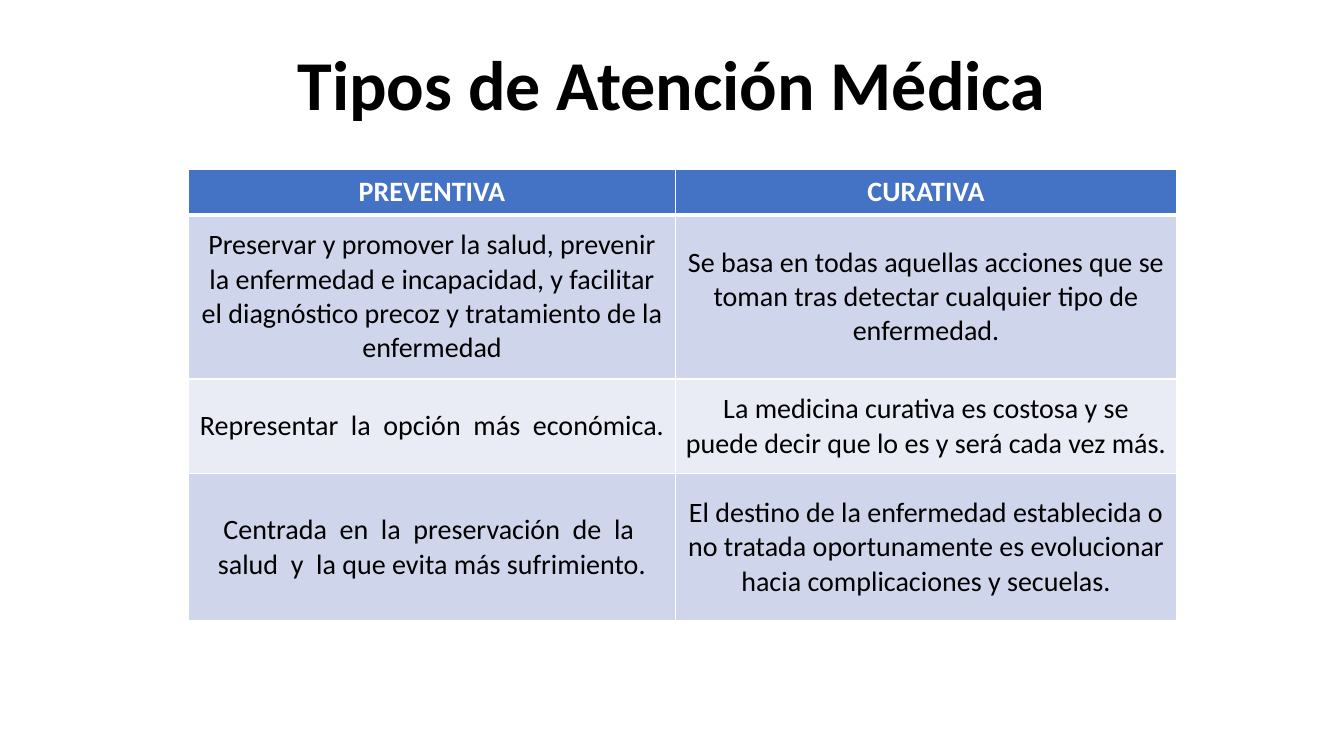
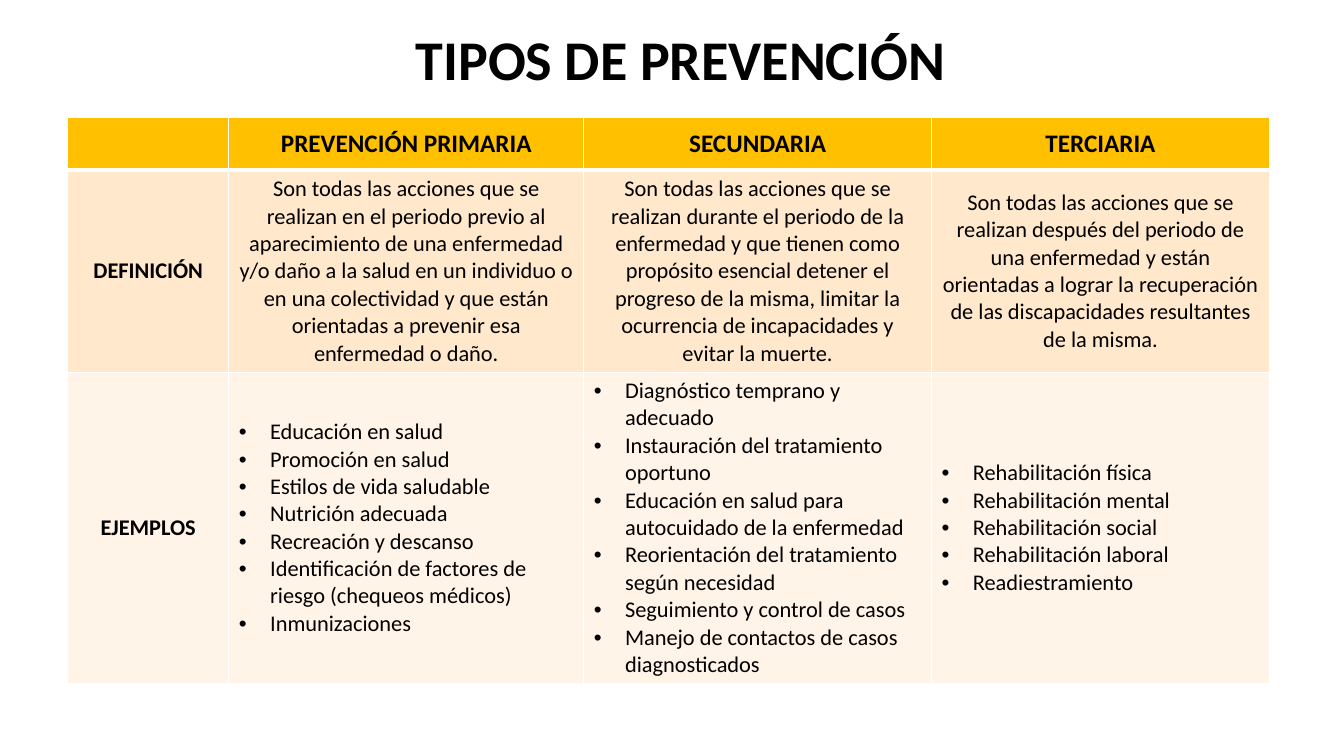
"""Build two slides that compare types of medical care and of prevention."""
from lxml.etree import SubElement
from pptx import Presentation
from pptx.dml.color import RGBColor
from pptx.enum.text import MSO_ANCHOR, MSO_AUTO_SIZE, PP_ALIGN
from pptx.oxml.ns import qn
from pptx.util import Inches, Pt

FONT = "Calibri"
COLORS = {
    "white": "FFFFFF", "black": "000000",
    "blue": "4472C4", "blue_band": "CFD5EA", "blue_light": "E9EBF5",
    "gold": "FFC000", "gold_band": "FFE8CC", "gold_light": "FFF4E7",
}
BULLET_INDENT = Inches(0.31)

SLIDES = [
    {
        "title": "Tipos de Atención Médica",
        "title_size": 50,
        "title_at": (2.61, 0.4, 8.11, 0.94),
        "table_at": (1.87, 1.68),
        "columns": [4.83, 4.97],
        "rows": [0.45, 1.63, 0.94, 1.46],
        "theme": "blue",
        "header_color": "white",
        "header_size": 20,
        "body_size": 20,
        "label_column": False,
        "cells": [
            ["PREVENTIVA", "CURATIVA"],
            ["Preservar y promover la salud, prevenir la enfermedad e incapacidad, "
             "y facilitar el diagnóstico precoz y tratamiento de la enfermedad",
             "Se basa en todas aquellas acciones que se toman tras detectar "
             "cualquier tipo de enfermedad."],
            ["Representar  la  opción  más  económica.",
             "La medicina curativa es costosa y se puede decir que lo es y será "
             "cada vez más."],
            ["Centrada  en  la  preservación  de  la  salud  y  la que evita más "
             "sufrimiento.",
             "El destino de la enfermedad establecida o no tratada oportunamente "
             "es evolucionar hacia complicaciones y secuelas."],
        ],
    },
    {
        "title": "TIPOS DE PREVENCIÓN",
        "title_size": 40,
        "title_at": (4.02, 0.25, 5.46, 0.74),
        "table_at": (0.67, 1.16),
        "columns": [1.6, 3.52, 3.45, 3.35],
        "rows": [0.53, 2, 3.09],
        "theme": "gold",
        "header_color": "black",
        "header_size": 18,
        "body_size": 16,
        "label_column": True,
        "cells": [
            ["", "PREVENCIÓN PRIMARIA", "SECUNDARIA", "TERCIARIA"],
            ["DEFINICIÓN",
             "Son todas las acciones que se realizan en el periodo previo al "
             "aparecimiento de una enfermedad y/o daño a la salud en un individuo "
             "o en una colectividad y que están orientadas a prevenir esa "
             "enfermedad o daño.",
             "Son todas las acciones que se realizan durante el periodo de la "
             "enfermedad y que tienen como propósito esencial detener el progreso "
             "de la misma, limitar la ocurrencia de incapacidades y evitar la "
             "muerte.",
             "Son todas las acciones que se realizan después del periodo de una "
             "enfermedad y están orientadas a lograr la recuperación de las "
             "discapacidades resultantes de la misma."],
            ["EJEMPLOS",
             ["Educación en salud",
              "Promoción en salud",
              "Estilos de vida saludable",
              "Nutrición adecuada",
              "Recreación y descanso",
              "Identificación de factores de riesgo (chequeos médicos)",
              "Inmunizaciones"],
             ["Diagnóstico temprano y adecuado",
              "Instauración del tratamiento oportuno",
              "Educación en salud para autocuidado de la enfermedad",
              "Reorientación del tratamiento según necesidad",
              "Seguimiento y control de casos",
              "Manejo de contactos de casos diagnosticados"],
             ["Rehabilitación física",
              "Rehabilitación mental",
              "Rehabilitación social",
              "Rehabilitación laboral",
              "Readiestramiento"]],
        ],
    },
]


def add_span(paragraph, text, size, color, bold):
    """Add one formatted run to a paragraph."""
    span = paragraph.add_run()
    span.text = text
    span.font.name = FONT
    span.font.size = Pt(size)
    span.font.bold = bold
    span.font.color.rgb = RGBColor.from_string(COLORS[color])


def style_cell(cell, fill, row_index):
    """Give a cell its white borders, fill and vertical centring."""
    properties = cell._tc.get_or_add_tcPr()
    widths = {"lnL": 1, "lnR": 1,
              "lnT": 3 if row_index == 1 else 1,
              "lnB": 3 if row_index == 0 else 1}
    for side, width in widths.items():
        border = SubElement(properties, qn(f"a:{side}"), w=str(Pt(width)))
        solid = SubElement(border, qn("a:solidFill"))
        SubElement(solid, qn("a:srgbClr"), val=COLORS["white"])
    cell.fill.solid()
    cell.fill.fore_color.rgb = RGBColor.from_string(COLORS[fill])
    cell.vertical_anchor = MSO_ANCHOR.MIDDLE


deck = Presentation()
deck.slide_width = Inches(13.33)
deck.slide_height = Inches(7.5)
title_only = deck.slide_layouts[5]

for content in SLIDES:
    page = deck.slides.add_slide(title_only)
    title = page.shapes.title
    title.left, title.top, title.width, title.height = map(Inches, content["title_at"])
    title.text_frame.auto_size = MSO_AUTO_SIZE.NONE
    title.text_frame.word_wrap = True
    title.text_frame.vertical_anchor = MSO_ANCHOR.MIDDLE
    heading = title.text_frame.paragraphs[0]
    heading.alignment = PP_ALIGN.CENTER
    heading.line_spacing = 0.9
    add_span(heading, content["title"], content["title_size"], "black", True)

    columns, rows = content["columns"], content["rows"]
    left, top = content["table_at"]
    table = page.shapes.add_table(
        len(rows), len(columns), Inches(left), Inches(top),
        Inches(sum(columns)), Inches(sum(rows))).table
    table.horz_banding = False
    for column, width in zip(table.columns, columns):
        column.width = Inches(width)
    for row, height in zip(table.rows, rows):
        row.height = Inches(height)

    theme = content["theme"]
    for row_index, row_texts in enumerate(content["cells"]):
        is_header = row_index == 0
        band = f"{theme}_band" if row_index % 2 else f"{theme}_light"
        size = content["header_size"] if is_header else content["body_size"]
        color = content["header_color"] if is_header else "black"
        for column_index, entry in enumerate(row_texts):
            cell = table.cell(row_index, column_index)
            style_cell(cell, theme if is_header else band, row_index)
            is_list = isinstance(entry, list)
            bold = is_header or (content["label_column"] and column_index == 0)
            for item_index, text in enumerate(entry if is_list else [entry]):
                frame = cell.text_frame
                paragraph = frame.add_paragraph() if item_index else frame.paragraphs[0]
                paragraph.alignment = PP_ALIGN.LEFT if is_list else PP_ALIGN.CENTER
                if is_list:
                    settings = paragraph._p.get_or_add_pPr()
                    settings.set("marL", str(BULLET_INDENT))
                    settings.set("indent", str(-BULLET_INDENT))
                    SubElement(settings, qn("a:buFont"), typeface="Arial")
                    SubElement(settings, qn("a:buChar"), char="•")
                if text:
                    add_span(paragraph, text, size, color, bold)

deck.save("out.pptx")
